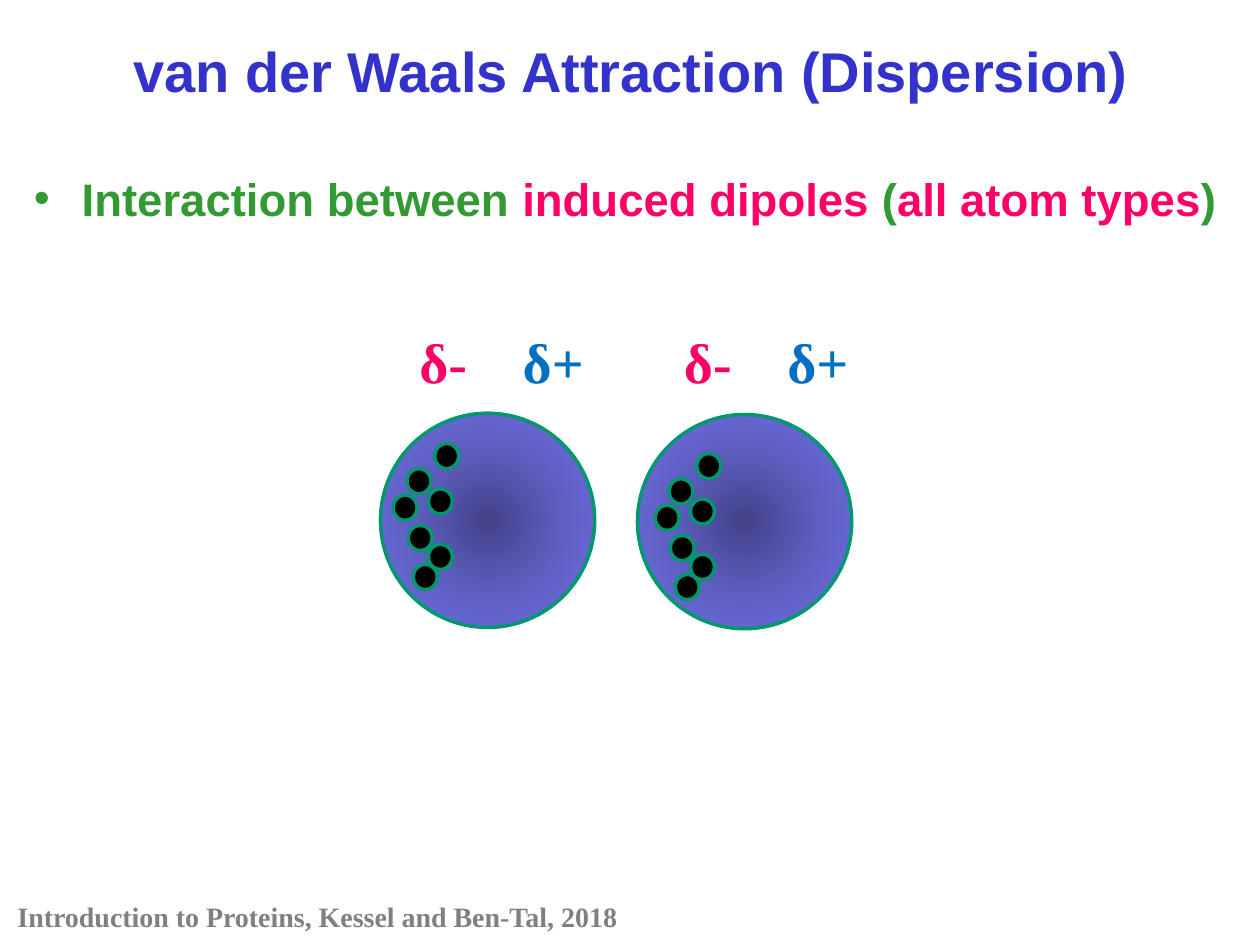
from pptx import Presentation
from pptx.dml.color import RGBColor
from pptx.enum.shapes import MSO_SHAPE
from pptx.enum.text import MSO_ANCHOR, PP_ALIGN
from pptx.oxml import parse_xml
from pptx.oxml.ns import nsdecls, qn
from pptx.util import Inches, Pt

OVAL = MSO_SHAPE.OVAL
TOP = MSO_ANCHOR.TOP
CENTER = PP_ALIGN.CENTER
TITLE_ONLY = 5

BLUE = RGBColor(0x33, 0x33, 0xCC)
GREEN = RGBColor(0x33, 0x99, 0x33)
PINK = RGBColor(0xFF, 0x00, 0x66)
SKY = RGBColor(0x00, 0x70, 0xC0)
GRAY = RGBColor(0x80, 0x80, 0x80)
TEAL = RGBColor(0x00, 0x97, 0x71)
BLACK = RGBColor(0x00, 0x00, 0x00)
CLOUD_STOPS = [(0, RGBColor(0x42, 0x42, 0x88)),
               (50, RGBColor(0x5F, 0x5F, 0xC2)),
               (100, RGBColor(0x70, 0x70, 0xE6))]

SANS, SERIF = "Arial", "Times New Roman"

# Electron positions in the left atom, and the shift to the right atom
ELECTRONS = [(3.23, 3.72), (3.12, 3.93), (3.4, 3.88), (3.24, 4.17),
             (3.4, 4.32), (3.45, 3.52), (3.28, 4.48)]
ELECTRON_SHIFT = (2.08, 0.08)


def style_font(font, name, size, color=None):
    font.name, font.size, font.bold = name, Pt(size), True
    if color is not None:
        font.color.rgb = color


def add_text(page, text, left, top, width, height, name, size, color, wrap=True):
    box = page.shapes.add_textbox(Inches(left), Inches(top), Inches(width), Inches(height))
    box.text_frame.word_wrap = wrap
    para = box.text_frame.paragraphs[0]
    para.text = text
    style_font(para.font, name, size, color)


def add_title(page, text):
    title = page.shapes.title
    title.left, title.top = Inches(0.17), Inches(0.24)
    title.width, title.height = Inches(9.68), Inches(0.63)
    title.text_frame.vertical_anchor = TOP
    para = title.text_frame.paragraphs[0]
    para.text = text
    para.alignment = CENTER
    style_font(para.font, SANS, 32, BLUE)


def add_bullet(page, spans):
    box = page.shapes.add_textbox(Inches(0.17), Inches(1.09), Inches(9.68), Inches(0.68))
    box.text_frame.word_wrap = True
    para = box.text_frame.paragraphs[0]
    para.line_spacing = 1.5
    properties = para._p.get_or_add_pPr()
    properties.set("marL", str(Inches(0.38)))
    properties.set("indent", str(-Inches(0.38)))
    properties.append(parse_xml(f'<a:buFont {nsdecls("a")} typeface="{SANS}"/>'))
    properties.append(parse_xml(f'<a:buChar {nsdecls("a")} char="•"/>'))
    style_font(para.font, SANS, 26)
    for text, color in spans:
        span = para.add_run()
        span.text = text
        span.font.color.rgb = color


def add_oval(page, left, top, width, height):
    oval = page.shapes.add_shape(OVAL, Inches(left), Inches(top), Inches(width), Inches(height))
    oval.shadow.inherit = False
    oval.line.color.rgb = TEAL
    oval.line.width = Pt(2)
    return oval


def add_cloud(page, left, top):
    """Electron cloud: a circle shaded outwards from its centre."""
    cloud = add_oval(page, left, top, 1.7, 1.7)
    cloud.fill.gradient()
    stops = "".join(f'<a:gs pos="{percent * 1000}"><a:srgbClr val="{color}"/></a:gs>'
                    for percent, color in CLOUD_STOPS)
    radial = parse_xml(
        f'<a:gradFill {nsdecls("a")} rotWithShape="1"><a:gsLst>{stops}</a:gsLst>'
        '<a:path path="circle"><a:fillToRect l="50000" t="50000" r="50000" b="50000"/>'
        '</a:path></a:gradFill>')
    properties = cloud._element.spPr
    properties.replace(properties.find(qn("a:gradFill")), radial)


def add_electron(page, left, top):
    electron = add_oval(page, left, top, 0.19, 0.2)
    electron.fill.solid()
    electron.fill.fore_color.rgb = BLACK


def main():
    deck = Presentation()
    deck.slide_width, deck.slide_height = Inches(10), Inches(7.5)
    page = deck.slides.add_slide(deck.slide_layouts[TITLE_ONLY])

    # Source line, title and statement
    add_text(page, "Introduction to Proteins, Kessel and Ben-Tal, 2018",
             0.04, 7.09, 5.32, 0.37, SERIF, 16, GRAY)
    add_title(page, "van der Waals Attraction (Dispersion)")
    add_bullet(page, [("Interaction between ", GREEN), ("induced dipoles ", PINK),
                      ("(", GREEN), ("all atom types", PINK), (")", GREEN)])

    # Two atoms with their electrons crowded to the left
    add_cloud(page, 3.02, 3.28)
    add_cloud(page, 5.06, 3.29)
    for shift_x, shift_y in [(0, 0), ELECTRON_SHIFT]:
        for left, top in ELECTRONS:
            add_electron(page, left + shift_x, top + shift_y)

    # Partial charges above each atom
    for shift in (0, 2.1):
        add_text(page, "δ+", 4.05 + shift, 2.55, 0.69, 0.64, SERIF, 32, SKY, wrap=False)
        add_text(page, "δ-", 3.23 + shift, 2.55, 0.58, 0.64, SERIF, 32, PINK, wrap=False)

    deck.save("out.pptx")


if __name__ == "__main__":
    main()
